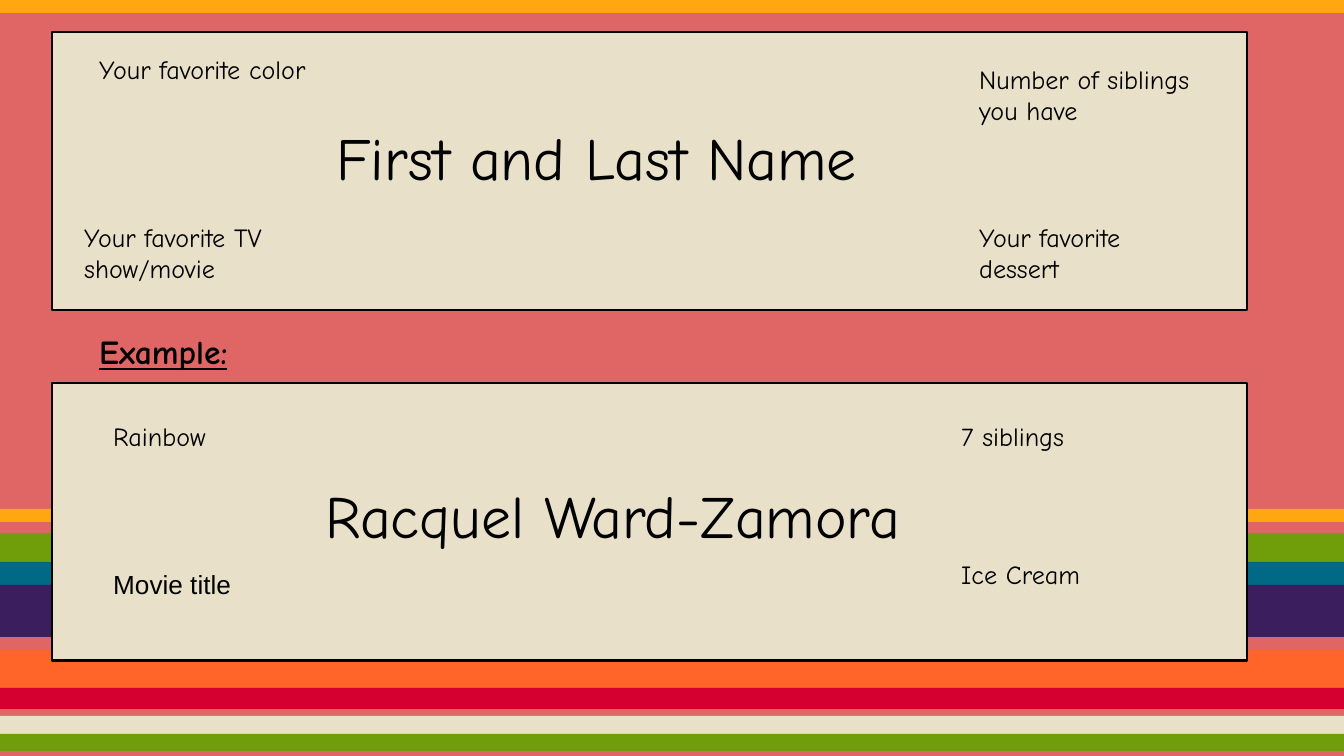
from dataclasses import dataclass

from pptx import Presentation
from pptx.dml.color import RGBColor
from pptx.enum.shapes import MSO_SHAPE
from pptx.enum.text import MSO_ANCHOR, MSO_AUTO_SIZE, PP_ALIGN
from pptx.util import Inches, Pt

SCALE = 9144000 / 1344


def px(n):
    """Turn px into EMU."""
    return round(n * SCALE)


@dataclass(frozen=True)
class Theme:
    """Colours, fonts and type sizes."""
    back: str = "E06666"
    ink: str = "000000"
    cream: str = "E9E0C9"
    gold: str = "FFA711"
    green: str = "709E0B"
    teal: str = "006985"
    plum: str = "3A1E5E"
    orange: str = "FF6428"
    red: str = "D60030"
    font: str = "Comic Neue"
    plain: str = "Arial"
    name: int = 32
    head: int = 18
    note: int = 14
    line: float = 1.5


class Deck:
    """Holds the style and the current slide."""

    def __init__(self, theme):
        """Start a deck with one title-only slide."""
        self.theme = theme
        self.file = Presentation()
        self.file.slide_width, self.file.slide_height = px(1344), px(756)
        self.slide = self.file.slides.add_slide(self.file.slide_layouts[5])
        fill = self.slide.background.fill
        fill.solid()
        fill.fore_color.rgb = RGBColor.from_string(theme.back)

    def rect(self, x, y, w, h, color):
        """Add a plain filled rectangle."""
        box = self.slide.shapes.add_shape(
            MSO_SHAPE.RECTANGLE, px(x), px(y), px(w), px(h))
        box.shadow.inherit = False
        box.fill.solid()
        box.fill.fore_color.rgb = RGBColor.from_string(color)
        box.line.fill.background()
        return box

    def band(self, y, h, color):
        """Add a stripe across the whole slide."""
        self.rect(0, y, 1344, h, color)

    def card(self, y):
        """Add an outlined name card."""
        box = self.rect(52, y, 1195, 278, self.theme.cream)
        box.line.fill.solid()
        box.line.fill.fore_color.rgb = RGBColor.from_string(self.theme.ink)
        box.line.width = Pt(self.theme.line)

    def style(self, box, text, size, font=None, bold=False):
        """Set and format the text of a box."""
        frame = box.text_frame
        frame.text = text
        frame.word_wrap = True
        frame.auto_size = MSO_AUTO_SIZE.NONE
        frame.vertical_anchor = MSO_ANCHOR.TOP
        frame.margin_left = frame.margin_right = Inches(0.1)
        frame.margin_top = frame.margin_bottom = Inches(0.1)
        para = frame.paragraphs[0]
        para.alignment = PP_ALIGN.LEFT
        face = para.runs[0].font
        face.name, face.size = font or self.theme.font, Pt(size)
        face.bold = face.underline = bold
        face.color.rgb = RGBColor.from_string(self.theme.ink)

    def title(self, x, y, w, h, text):
        """Place the title in front of what is drawn so far."""
        box = self.slide.shapes.title
        box.left, box.top, box.width, box.height = map(px, (x, y, w, h))
        self.slide.shapes._spTree.append(box._element)
        self.style(box, text, self.theme.name)

    def text(self, x, y, w, h, text, size, font=None, bold=False):
        """Add a text box."""
        box = self.slide.shapes.add_textbox(px(x), px(y), px(w), px(h))
        self.style(box, text, size, font, bold)

    def note(self, x, y, text, font=None):
        """Add a small corner note."""
        self.text(x, y, 251, 90, text, self.theme.note, font)


def main():
    """Build the slide."""
    look = Theme()
    deck = Deck(look)
    bands = [
        (0, 13, look.gold), (716, 20, look.cream), (533, 34, look.green),
        (562, 34, look.teal), (585, 52, look.plum), (650, 38, look.orange),
        (688, 21, look.red), (734, 17, look.green), (509, 13, look.gold),
    ]
    for band in bands:
        deck.band(*band)
    for y in (32, 383):
        deck.card(y)

    deck.title(323, 107, 653, 124, "First and Last Name")
    deck.text(312, 465, 653, 124, "Racquel Ward-Zamora", look.name)
    deck.text(86, 318, 362, 58, "Example:", look.head, bold=True)

    notes = [
        (86, 40, "Your favorite color"),
        (966, 50, "Number of siblings you have"),
        (71, 208, "Your favorite TV show/movie"),
        (966, 208, "Your favorite dessert"),
        (100, 407, "Rainbow"),
        (948, 407, "7 siblings"),
        (100, 555, "Movie title", look.plain),
        (948, 545, "Ice Cream"),
    ]
    for note in notes:
        deck.note(*note)
    deck.file.save("out.pptx")


if __name__ == "__main__":
    main()
